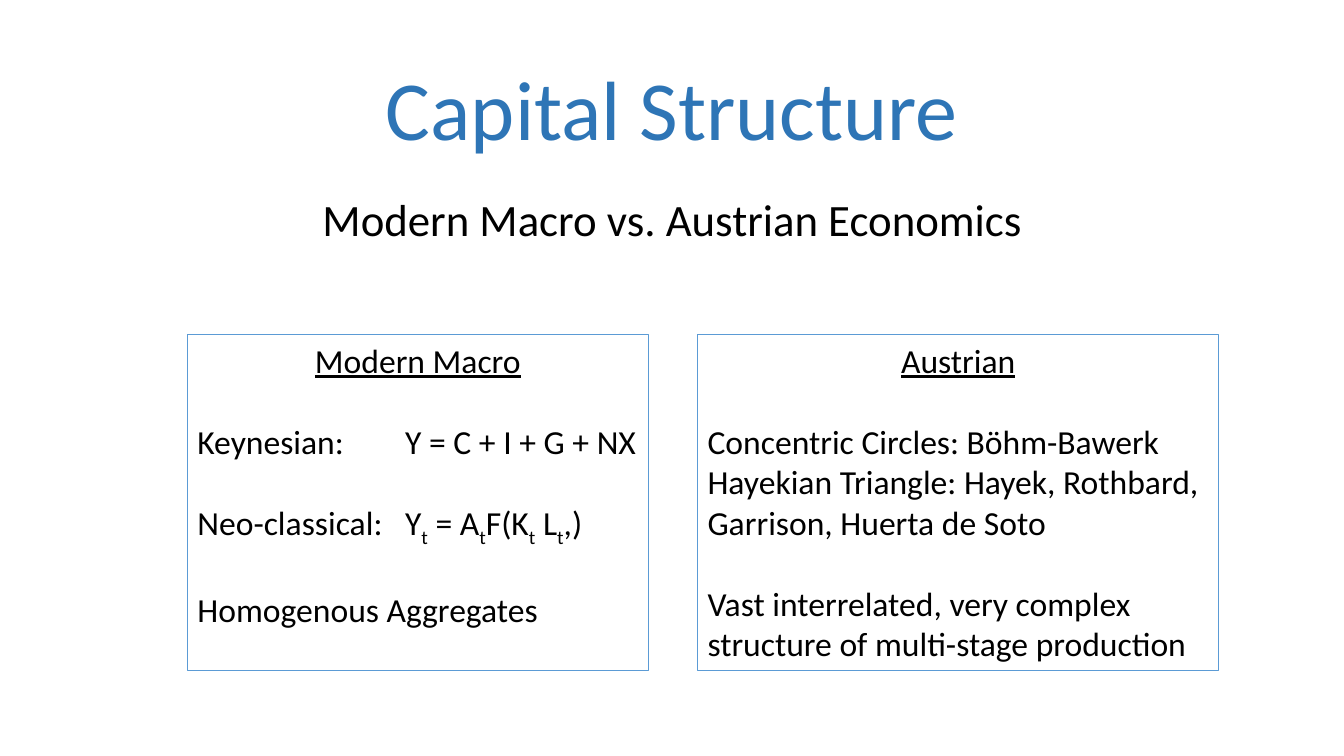
from dataclasses import dataclass

from lxml import etree
from pptx import Presentation
from pptx.dml.color import RGBColor
from pptx.enum.shapes import MSO_SHAPE
from pptx.enum.text import MSO_ANCHOR, MSO_AUTO_SIZE, PP_ALIGN
from pptx.oxml.ns import qn
from pptx.util import Inches, Pt

RECTANGLE = MSO_SHAPE.RECTANGLE
TOP, MIDDLE = MSO_ANCHOR.TOP, MSO_ANCHOR.MIDDLE
CENTER, LEFT = PP_ALIGN.CENTER, PP_ALIGN.LEFT
FIXED = MSO_AUTO_SIZE.NONE
TITLE_ONLY = 5


@dataclass(frozen=True)
class Theme:
    font: str = "Calibri"
    title_color: RGBColor = RGBColor(0x2E, 0x75, 0xB6)
    text_color: RGBColor = RGBColor(0, 0, 0)
    border_color: RGBColor = RGBColor(0x5B, 0x9B, 0xD5)
    border_width: Pt = Pt(0.75)
    title_size: Pt = Pt(60)
    subtitle_size: Pt = Pt(32)
    body_size: Pt = Pt(24)
    group_gap: Pt = Pt(29.3)
    equation_tab: Inches = Inches(2.06)


THEME = Theme()
SLIDE_WIDTH, SLIDE_HEIGHT = Inches(13.33), Inches(7.5)

TITLE_BOX = (0, 5.33, 100, 19.33)
SUBTITLE_BOX = (12.3, 24.67, 75.47, 8.53)
MACRO_BOX = (13.95, 44.27, 34.28, 44.4)
AUSTRIAN_BOX = (51.91, 44.27, 38.78, 44.4)

MACRO_GROUPS = [
    ["Keynesian:\tY = C + I + G + NX"],
    ["Neo-classical:\tY_t = A_tF(K_t L_t,)"],
    ["Homogenous Aggregates"],
]
AUSTRIAN_GROUPS = [
    [
        "Concentric Circles: Böhm-Bawerk",
        "Hayekian Triangle: Hayek, Rothbard, Garrison, Huerta de Soto",
    ],
    ["Vast interrelated, very complex structure of multi-stage production"],
]


def to_lengths(box):
    left, top, width, height = (share / 100 for share in box)
    return (
        int(left * SLIDE_WIDTH),
        int(top * SLIDE_HEIGHT),
        int(width * SLIDE_WIDTH),
        int(height * SLIDE_HEIGHT),
    )


def style_paragraph(paragraph, size, color, alignment):
    paragraph.alignment = alignment
    for run in paragraph.runs:
        run.font.name = THEME.font
        run.font.size = size
        run.font.color.rgb = color


def prepare_frame(frame, anchor):
    frame.word_wrap = True
    frame.auto_size = FIXED
    frame.vertical_anchor = anchor


def place_title(slide, box, words):
    title = slide.shapes.title
    title.left, title.top, title.width, title.height = to_lengths(box)
    frame = title.text_frame
    prepare_frame(frame, MIDDLE)
    frame.text = words
    heading = frame.paragraphs[0]
    heading.line_spacing = 0.9
    style_paragraph(heading, THEME.title_size, THEME.title_color, CENTER)


def place_subtitle(slide, box, words):
    frame = slide.shapes.add_textbox(*to_lengths(box)).text_frame
    prepare_frame(frame, TOP)
    frame.text = words
    style_paragraph(frame.paragraphs[0], THEME.subtitle_size, THEME.text_color, CENTER)


def write_subscripts(paragraph, words):
    base, *indexed = words.split("_")
    paragraph.text = base
    for piece in indexed:
        subscript = paragraph.add_run()
        subscript.text = piece[0]
        subscript._r.get_or_add_rPr().set("baseline", "-25000")
        if piece[1:]:
            paragraph.add_run().text = piece[1:]


def add_equation_tab(paragraph):
    tabs = etree.SubElement(paragraph._p.get_or_add_pPr(), qn("a:tabLst"))
    etree.SubElement(tabs, qn("a:tab"), pos=str(int(THEME.equation_tab)), algn="l")


def place_school(slide, box, name, groups):
    panel = slide.shapes.add_shape(RECTANGLE, *to_lengths(box))
    panel.shadow.inherit = False
    panel.fill.background()
    panel.line.color.rgb = THEME.border_color
    panel.line.width = THEME.border_width

    frame = panel.text_frame
    prepare_frame(frame, TOP)
    frame.text = name
    heading = frame.paragraphs[0]
    style_paragraph(heading, THEME.body_size, THEME.text_color, CENTER)
    heading.runs[0].font.underline = True

    for group in groups:
        for position, words in enumerate(group):
            point = frame.add_paragraph()
            write_subscripts(point, words)
            style_paragraph(point, THEME.body_size, THEME.text_color, LEFT)
            if position == 0:
                point.space_before = THEME.group_gap
            if "\t" in words:
                add_equation_tab(point)


def main():
    deck = Presentation()
    deck.slide_width, deck.slide_height = SLIDE_WIDTH, SLIDE_HEIGHT
    slide = deck.slides.add_slide(deck.slide_layouts[TITLE_ONLY])
    place_title(slide, TITLE_BOX, "Capital Structure")
    place_subtitle(slide, SUBTITLE_BOX, "Modern Macro vs. Austrian Economics")
    place_school(slide, MACRO_BOX, "Modern Macro", MACRO_GROUPS)
    place_school(slide, AUSTRIAN_BOX, "Austrian", AUSTRIAN_GROUPS)
    deck.save("out.pptx")


if __name__ == "__main__":
    main()
